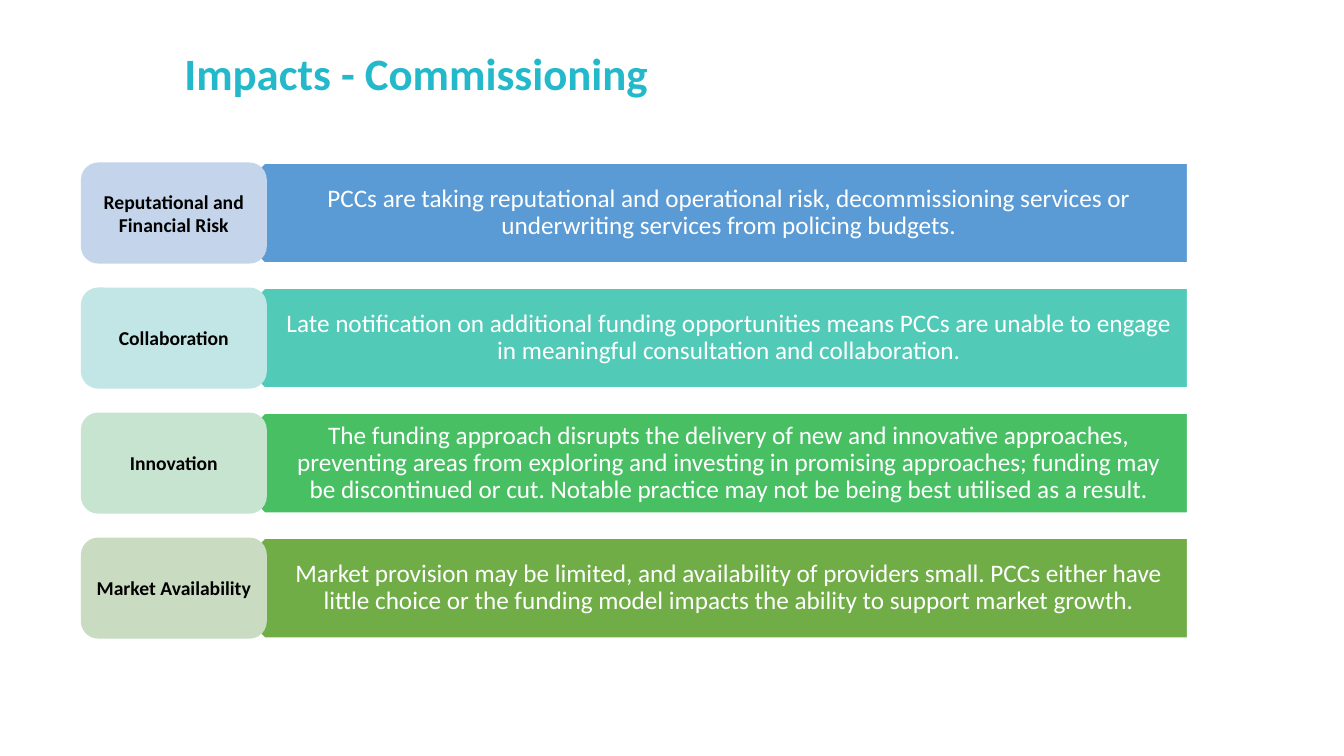
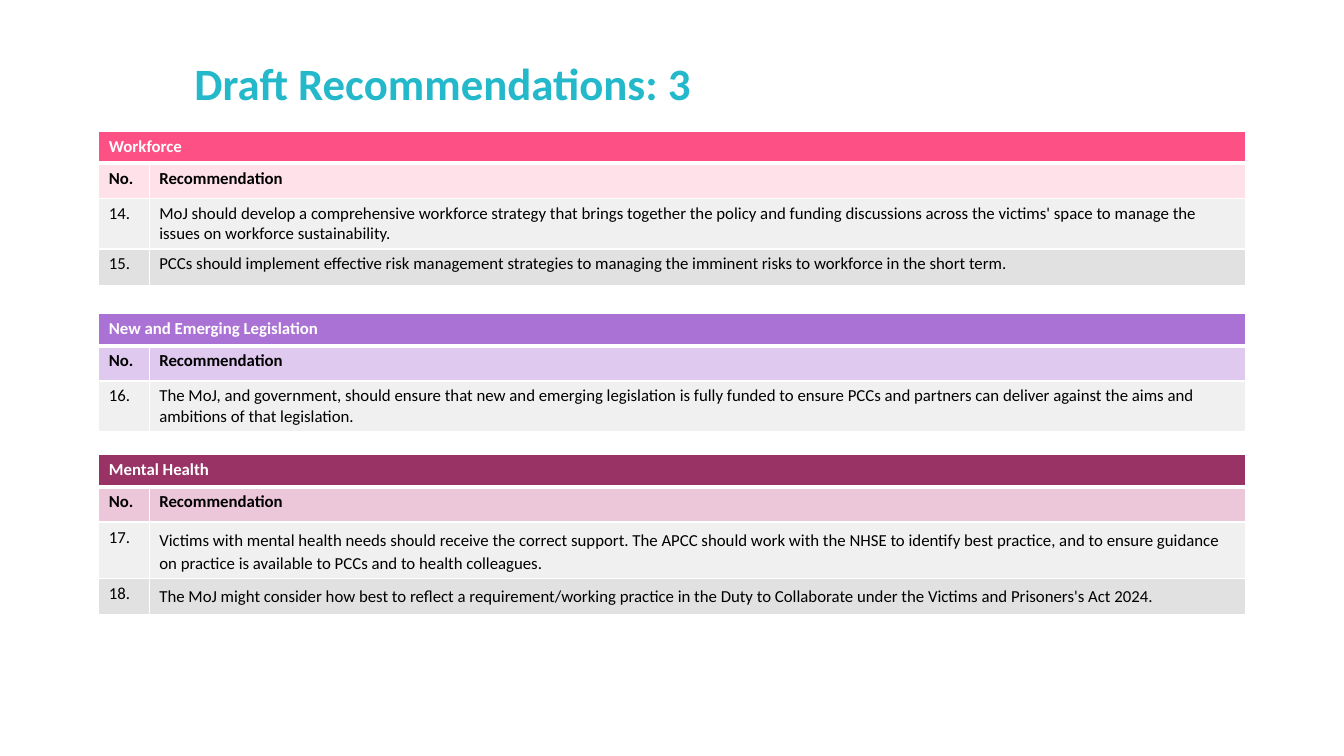
from lxml import etree
from pptx import Presentation
from pptx.dml.color import RGBColor
from pptx.enum.shapes import MSO_SHAPE as SHAPE
from pptx.enum.text import MSO_ANCHOR as ANCHOR, PP_ALIGN as ALIGN
from pptx.oxml import parse_xml
from pptx.util import Pt

NS = "http://schemas.openxmlformats.org/drawingml/2006/main"
TEAL, WHITE, BLACK = "23B8CA", "FFFFFF", "000000"
TITLE = dict(size=Pt(32), bold=True)
LABEL = dict(size=Pt(14), bold=True)
BODY = dict(size=Pt(18), bold=False)
CELL_BOLD = dict(size=Pt(12), bold=True)
CELL = dict(size=Pt(12), bold=False)


def rgb(hex_text):
    return RGBColor.from_string(hex_text)


def write(tf, text, color, font, align=ALIGN.LEFT, spacing=1.0):
    p = tf.paragraphs[0]
    p.alignment, p.line_spacing = align, spacing
    r = p.add_run()
    r.text = text
    r.font.name = "Calibri"
    r.font.color.rgb = rgb(color)
    for name, value in font.items():
        setattr(r.font, name, value)


prs = Presentation()
prs.slide_width, prs.slide_height = Pt(960), Pt(540)

# Both slides and their titles
slides = []
for title, left, top in [("Impacts - Commissioning", 124.6, 20.9),
                         ("Draft Recommendations: 3", 131.8, 28.1)]:
    s = prs.slides.add_slide(prs.slide_layouts[6])
    tf = s.shapes.add_textbox(Pt(left), Pt(top), Pt(828), Pt(66.2)).text_frame
    tf.word_wrap, tf.vertical_anchor = True, ANCHOR.MIDDLE
    write(tf, title, TEAL, TITLE, spacing=0.9)
    slides.append(s)
impacts, recommendations = slides

# Impacts: a bar with its text, and a label over the bar's tip
ROW_TOP, ROW_STEP, ROW_H = 116.6, 89.3, 71.2
rows = [
    ("Reputational and Financial Risk", "5B9BD5", "C4D5EB",
     "PCCs are taking reputational and operational risk, decommissioning "
     "services or underwriting services from policing budgets."),
    ("Collaboration", "52CAB8", "C2E6E5",
     "Late notification on additional funding opportunities means PCCs are "
     "unable to engage in meaningful consultation and collaboration."),
    ("Innovation", "49BF64", "C7E4D1",
     "The funding approach disrupts the delivery of new and innovative "
     "approaches, preventing areas from exploring and investing in promising "
     "approaches; funding may be discontinued or cut. Notable practice may "
     "not be being best utilised as a result."),
    ("Market Availability", "70AD47", "C9DBC1",
     "Market provision may be limited, and availability of providers small. "
     "PCCs either have little choice or the funding model impacts the ability "
     "to support market growth."),
]
for i, (label, bar_color, label_color, text) in enumerate(rows):
    top = ROW_TOP + i * ROW_STEP
    bar = impacts.shapes.add_shape(SHAPE.PENTAGON, Pt(153.4), Pt(top), Pt(694.8), Pt(ROW_H))
    bar.rotation = 180
    box = impacts.shapes.add_textbox(Pt(171.4), Pt(top), Pt(676.8), Pt(ROW_H))
    tag = impacts.shapes.add_shape(SHAPE.ROUNDED_RECTANGLE, Pt(58.3), Pt(top),
                                   Pt(131.8), Pt(ROW_H))
    for sp, fill, line in [(bar, bar_color, WHITE), (tag, label_color, label_color)]:
        sp.shadow.inherit = False
        sp.fill.solid()
        sp.fill.fore_color.rgb = rgb(fill)
        sp.line.color.rgb = rgb(line)
        sp.line.width = Pt(1)
    for sp, margin_left, margin_right in [(box, 31.7, 10), (tag, 5, 5)]:
        tf = sp.text_frame
        tf.word_wrap, tf.vertical_anchor = True, ANCHOR.MIDDLE
        tf.margin_left, tf.margin_right = Pt(margin_left), Pt(margin_right)
    write(box.text_frame, text, WHITE, BODY, ALIGN.CENTER, 0.9)
    write(tag.text_frame, label, BLACK, LABEL, ALIGN.CENTER)

# Recommendations: heading, column names, numbered rows
COL_WIDTHS = [36, 783.4]
ROW_HEIGHTS = [23, 25.2, 24.5, 25.9]
BANDS = ["F0F0F0", "E1E1E1"]
tables = [
    (93.6, "Workforce", "FD5186", "FFE1EA", 1.0, [
        ("14.", "MoJ should develop a comprehensive workforce strategy that brings "
                "together the policy and funding discussions across the victims' space "
                "to manage the issues on workforce sustainability."),
        ("15.", "PCCs should implement effective risk management strategies to "
                "managing the imminent risks to workforce in the short term.")]),
    (223.9, "New and Emerging Legislation", "AA72D4", "DFC9EF", 1.0, [
        ("16.", "The MoJ, and government, should ensure that new and emerging "
                "legislation is fully funded to ensure PCCs and partners can deliver "
                "against the aims and ambitions of that legislation.")]),
    (324.7, "Mental Health", "993366", "ECC6D9", 1.15, [
        ("17.", "Victims with mental health needs should receive the correct support. "
                "The APCC should work with the NHSE to identify best practice, and to "
                "ensure guidance on practice is available to PCCs and to health "
                "colleagues."),
        ("18.", "The MoJ might consider how best to reflect a requirement/working "
                "practice in the Duty to Collaborate under the Victims and Prisoners's "
                "Act 2024.")]),
]
for top, heading, heading_color, names_color, spacing, items in tables:
    content = [(heading, ""), ("No.", "Recommendation")] + items
    fills = [heading_color, names_color] + BANDS
    heights = ROW_HEIGHTS[:len(content)]
    table = recommendations.shapes.add_table(
        len(content), 2, Pt(70.6), Pt(top), Pt(sum(COL_WIDTHS)), Pt(sum(heights))).table
    table.first_row = table.horz_banding = False
    for col, width in zip(table.columns, COL_WIDTHS):
        col.width = Pt(width)
    for row, height in zip(table.rows, heights):
        row.height = Pt(height)
    table.cell(0, 0).merge(table.cell(0, 1))
    for i, texts in enumerate(content):
        for j, text in enumerate(texts):
            cell = table.cell(i, j)
            if text:
                write(cell.text_frame, text, WHITE if i == 0 else BLACK,
                      CELL_BOLD if i < 2 else CELL,
                      spacing=spacing if i > 1 and j == 1 else 1.0)
            # White borders, thick below the heading
            tc_pr = cell._tc.get_or_add_tcPr()
            for side in "LRTB":
                thick = (i, side) in [(0, "B"), (1, "T")]
                ln = etree.Element(f"{{{NS}}}ln{side}", w=str(Pt(3 if thick else 1)))
                fill = etree.SubElement(ln, f"{{{NS}}}solidFill")
                etree.SubElement(fill, f"{{{NS}}}srgbClr", val=WHITE)
                tc_pr.append(parse_xml(etree.tostring(ln)))
            cell.fill.solid()
            cell.fill.fore_color.rgb = rgb(fills[i])

prs.save("out.pptx")
